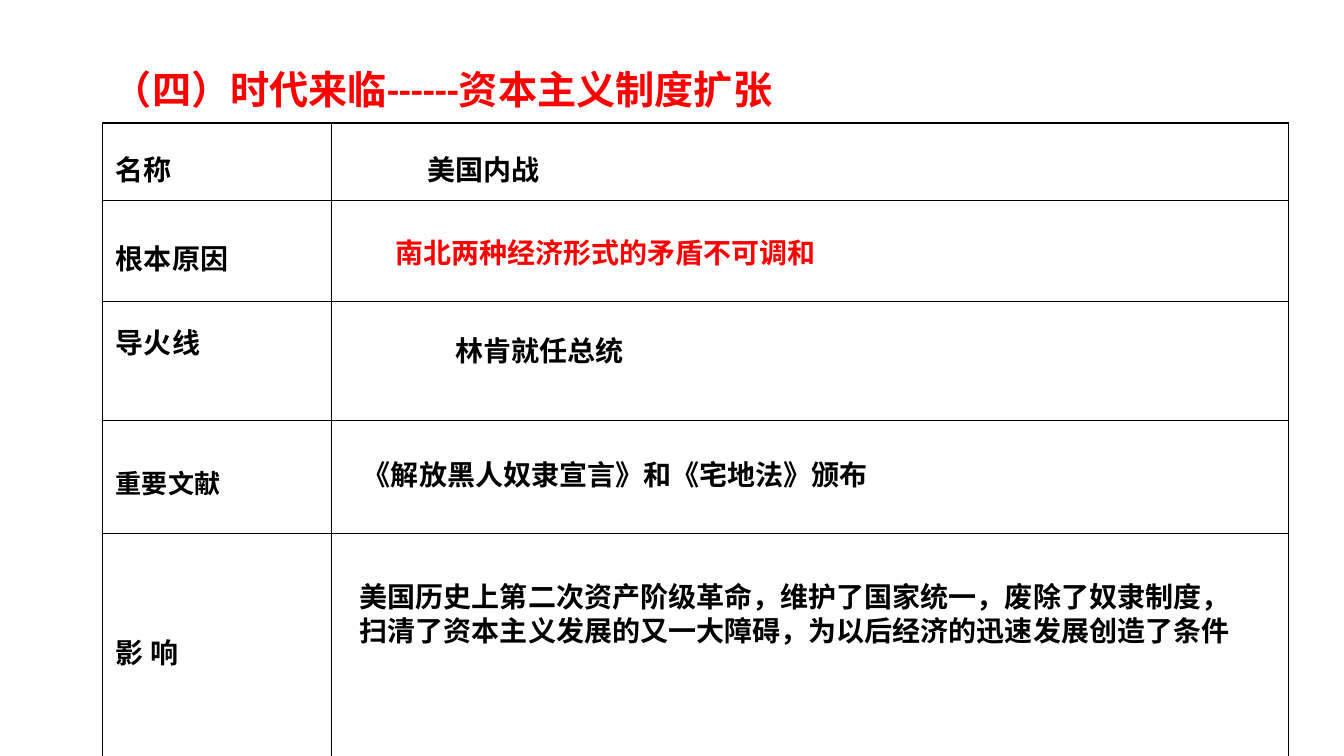
from lxml.etree import SubElement
from pptx import Presentation
from pptx.dml.color import RGBColor
from pptx.enum.text import MSO_ANCHOR as Anchor, MSO_AUTO_SIZE as AutoSize, PP_ALIGN as Align
from pptx.oxml import parse_xml
from pptx.oxml.ns import nsdecls, qn
from pptx.util import Inches, Pt

COLORS = {"black": "000000", "red": "FF0000"}
CJK_FONT = "Noto Sans CJK SC"
BODY = {"size": Pt(20), "bold": True, "name": CJK_FONT}
LABEL = {**BODY, "name": "Arial"}
TITLE = {**BODY, "size": Pt(28), "name": "Calibri"}

COLUMN_WIDTHS = [2.27, 9.49]
# height, label, label format, label anchor
ROWS = [
    (0.77, "名称", LABEL, Anchor.MIDDLE),
    (1.0, "根本原因", LABEL, Anchor.MIDDLE),
    (1.18, "导火线", LABEL, Anchor.TOP),
    (1.12, "重要文献", {**LABEL, "size": Pt(18.6)}, Anchor.MIDDLE),
    (2.23, "影 响", LABEL, Anchor.MIDDLE),
]
# row: text, colour, left margin, line spacing
ANSWERS = {
    0: ("美国内战", "black", 0.95, 1.3),
    1: ("南北两种经济形式的矛盾不可调和", "red", 0.63, 1.0),
    3: ("《解放黑人奴隶宣言》和《宅地法》颁布", "black", 0.31, Pt(24)),
}


def write(paragraph, text, font_format, color="black", line_spacing=None):
    run = paragraph.add_run()
    run.text = text
    for name, value in font_format.items():
        setattr(run.font, name, value)
    run.font.color.rgb = RGBColor.from_string(COLORS[color])
    SubElement(run.font._element, qn("a:ea"), typeface=CJK_FONT)
    paragraph.alignment = Align.LEFT
    if line_spacing:
        paragraph.line_spacing = line_spacing


def draw_borders(cell):
    properties = cell._tc.get_or_add_tcPr()
    for index, side in enumerate("LRTB"):
        properties.insert(index, parse_xml(
            f'<a:ln{side} {nsdecls("a")} w="12700"><a:solidFill>'
            f'<a:srgbClr val="{COLORS["black"]}"/></a:solidFill></a:ln{side}>'))


def format_cell(cell, anchor=Anchor.MIDDLE, left=0.13):
    cell.fill.background()
    draw_borders(cell)
    cell.vertical_anchor = anchor
    cell.margin_left, cell.margin_right = Inches(left), Inches(0.13)
    cell.margin_top = cell.margin_bottom = Inches(0.07)


def add_title(slide, left, top, width, height):
    title = slide.shapes.title
    title.left, title.top = Inches(left), Inches(top)
    title.width, title.height = Inches(width), Inches(height)
    frame = title.text_frame
    frame.auto_size = AutoSize.NONE
    frame.vertical_anchor = Anchor.TOP
    write(frame.paragraphs[0], "（四）时代来临------资本主义制度扩张", TITLE, "red")


def add_summary_table(slide, left, top):
    height = sum(row[0] for row in ROWS)
    table = slide.shapes.add_table(
        len(ROWS), len(COLUMN_WIDTHS), Inches(left), Inches(top),
        Inches(sum(COLUMN_WIDTHS)), Inches(height)).table
    table.first_row = table.horz_banding = False
    for column, width in zip(table.columns, COLUMN_WIDTHS):
        column.width = Inches(width)
    for index, (row_height, label, label_format, anchor) in enumerate(ROWS):
        table.rows[index].height = Inches(row_height)
        label_cell, answer_cell = table.cell(index, 0), table.cell(index, 1)
        format_cell(label_cell, anchor)
        write(label_cell.text_frame.paragraphs[0], label, label_format, line_spacing=1.3)
        if index in ANSWERS:
            text, color, margin, spacing = ANSWERS[index]
            format_cell(answer_cell, left=margin)
            write(answer_cell.text_frame.paragraphs[0], text, BODY, color, spacing)
        else:
            format_cell(answer_cell)


def add_note(slide, left, top, width, height, lines):
    """Place a text box over an empty table cell, one paragraph a line."""
    frame = slide.shapes.add_textbox(
        Inches(left), Inches(top), Inches(width), Inches(height)).text_frame
    frame.word_wrap = True
    for index, line in enumerate(lines):
        paragraph = frame.add_paragraph() if index else frame.paragraphs[0]
        write(paragraph, line, BODY)


def main():
    presentation = Presentation()
    presentation.slide_width, presentation.slide_height = Inches(13.33), Inches(7.5)
    slide = presentation.slides.add_slide(presentation.slide_layouts[5])
    add_title(slide, 1.02, 0.6, 7.64, 0.57)
    add_summary_table(slide, 1.02, 1.22)
    add_note(slide, 4.42, 3.26, 6.25, 0.44, ["林肯就任总统"])
    add_note(slide, 3.47, 5.7, 9.63, 0.77, [
        "美国历史上第二次资产阶级革命，维护了国家统一，废除了奴隶制度，",
        "扫清了资本主义发展的又一大障碍，为以后经济的迅速发展创造了条件",
    ])
    presentation.save("out.pptx")


if __name__ == "__main__":
    main()
